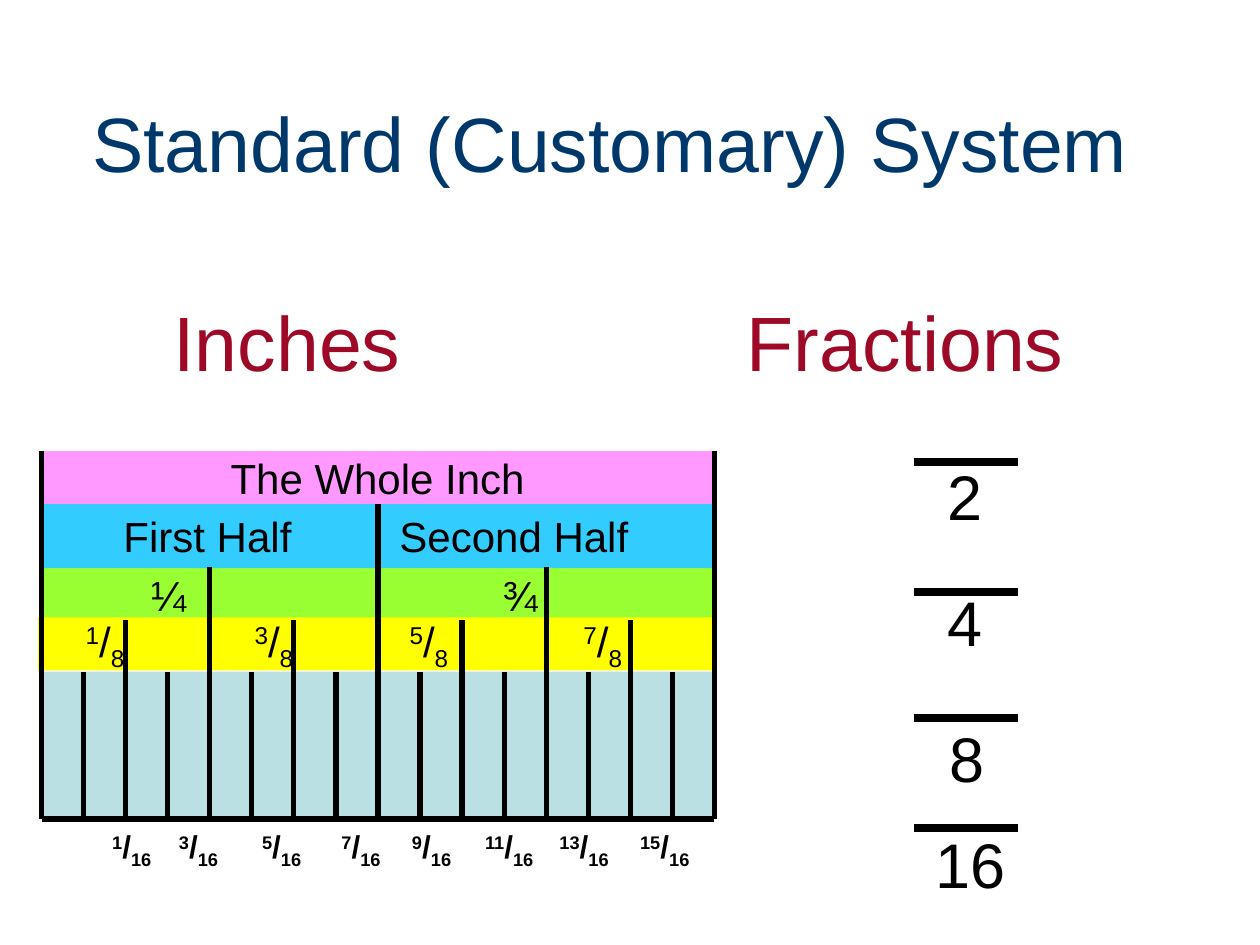
from lxml import etree
from pptx import Presentation
from pptx.dml.color import RGBColor
from pptx.enum import shapes, text
from pptx.oxml.ns import qn
from pptx.util import Inches, Pt

COLORS = {"title": "00386B", "heading": "9E0927", "ink": "000000",
          "whole": "FF99FF", "half": "33CCFF", "quarter": "99FF33",
          "eighth": "FFFF00", "sixteenth": "BBE0E3"}

# text, left, top, width, height, color, centred
HEADINGS = [
    ("Standard (Customary) System", 0.49, 0.71, 8.71, 0.83, "title", True),
    ("Inches", 1.28, 2.29, 2, 0.83, "heading", False),
    ("Fractions", 5.83, 2.29, 2.72, 0.83, "heading", False),
]
# denominator, left, top, width, height of bar
DENOMINATORS = [("2", 7.42, 3.58, 0.48, 3.67), ("4", 7.42, 4.58, 0.48, 4.7),
                ("8", 7.44, 5.66, 0.48, 5.7), ("16", 7.33, 6.5, 0.77, 6.57)]
# color, left, top, width, height, labels with their left edges on the slide
BANDS = [
    ("quarter", 0.33, 4.51, 5.33, 0.42, [("¼", 1.2), ("¾", 3.99)]),
    ("whole", 0.33, 3.58, 5.33, 0.42, [("The Whole Inch", 1.83)]),
    ("half", 0.34, 4, 5.33, 0.51, [("First Half", 0.98), ("Second Half", 3.17)]),
    ("eighth", 0.3, 4.9, 5.35, 0.42,
     [("1/8", 0.68), ("3/8", 2.02), ("5/8", 3.25), ("7/8", 4.63)]),
]
SIXTEENTHS = [("1/16", 0.89), ("3/16", 1.42), ("5/16", 2.08), ("7/16", 2.71),
              ("9/16", 3.27), ("11/16", 3.85), ("13/16", 4.44), ("15/16", 5.08)]
RULER_LEFT, RULER_RIGHT, RULER_BOTTOM = 0.33, 5.67, 6.5
DIVISIONS = 16
# step between ticks, top of those ticks; the coarsest match wins
TICK_TOPS = [(16, 3.58), (8, 4), (4, 4.5), (2, 4.92), (1, 5.33)]


def rgb(name):
    return RGBColor.from_string(COLORS[name])


def set_font(para, size, color="ink", bold=False):
    para.font.name = "Arial"
    para.font.size = Pt(size)
    para.font.bold = bold
    para.font.color.rgb = rgb(color)


def add_text(page, words, left, top, width, height, size, color="ink", centred=False):
    box = page.shapes.add_textbox(*map(Inches, (left, top, width, height)))
    box.text_frame.word_wrap = centred
    para = box.text_frame.paragraphs[0]
    para.text = words
    para.alignment = text.PP_ALIGN.CENTER if centred else text.PP_ALIGN.LEFT
    set_font(para, size, color)


def add_line(owner, x1, y1, x2, y2, weight):
    line = owner.shapes.add_connector(
        shapes.MSO_CONNECTOR.STRAIGHT, *map(Inches, (x1, y1, x2, y2)))
    line.line.color.rgb = rgb("ink")
    line.line.width = Pt(weight)
    etree.SubElement(line._element.spPr, qn("a:effectLst"))


def add_block(owner, color, left, top, width, height):
    block = owner.shapes.add_shape(
        shapes.MSO_SHAPE.RECTANGLE, *map(Inches, (left, top, width, height)))
    block.shadow.inherit = False
    block.fill.solid()
    block.fill.fore_color.rgb = rgb(color)
    block.line.fill.background()
    return block


def add_run(para, words, baseline=0):
    span = para.add_run()
    span.text = words
    if baseline:
        span._r.get_or_add_rPr().set("baseline", str(baseline * 1000))


def write_labels(shape, labels, left, size, bold=False):
    """Put labels on one line: an inset places the first, tab stops the rest."""
    frame = shape.text_frame
    frame.word_wrap = True
    frame.vertical_anchor = text.MSO_ANCHOR.MIDDLE
    start = labels[0][1]
    frame.margin_left, frame.margin_right = Inches(start - left), 0
    para = frame.paragraphs[0]
    para.alignment = text.PP_ALIGN.LEFT
    tabs = etree.SubElement(para._p.get_or_add_pPr(), qn("a:tabLst"))
    for _, position in labels[1:]:
        etree.SubElement(tabs, qn("a:tab"), pos=str(Inches(position - start)), algn="l")
    set_font(para, size, bold=bold)
    for index, (label, _) in enumerate(labels):
        if index:
            add_run(para, "\t")
        numerator, slash, denominator = label.partition("/")
        add_run(para, numerator, 30 if slash else 0)
        if slash:
            add_run(para, slash)
            add_run(para, denominator, -25)


def add_ruler(page):
    for color, left, top, width, height, labels in BANDS:
        write_labels(add_block(page, color, left, top, width, height), labels, left, 24)

    step = (RULER_RIGHT - RULER_LEFT) / DIVISIONS
    cell_top = TICK_TOPS[-1][1]
    cells = page.shapes.add_group_shape()
    for index in range(DIVISIONS):
        add_block(cells, "sixteenth", RULER_LEFT + index * step, cell_top,
                  step, RULER_BOTTOM - cell_top)

    ticks = page.shapes.add_group_shape()
    add_line(ticks, RULER_LEFT, RULER_BOTTOM, RULER_RIGHT, RULER_BOTTOM, 3)
    for index in range(DIVISIONS + 1):
        top = next(top for every, top in TICK_TOPS if index % every == 0)
        x = RULER_LEFT + index * step
        add_line(ticks, x, top, x, RULER_BOTTOM, 3)

    left = 0.85
    box = page.shapes.add_textbox(*map(Inches, (left, RULER_BOTTOM, 4.8, 0.47)))
    write_labels(box, SIXTEENTHS, left, 18, bold=True)


def main():
    deck = Presentation()
    deck.slide_width, deck.slide_height = Inches(10), Inches(7.5)
    page = deck.slides.add_slide(deck.slide_layouts[6])
    for words, left, top, width, height, color, centred in HEADINGS:
        add_text(page, words, left, top, width, height, 44, color, centred)
    for words, left, top, width, bar in DENOMINATORS:
        add_text(page, words, left, top, width, 0.7, 36)
        add_line(page, 8.08, bar, 7.25, bar, 4.5)
    add_ruler(page)
    deck.save("out.pptx")


if __name__ == "__main__":
    main()
